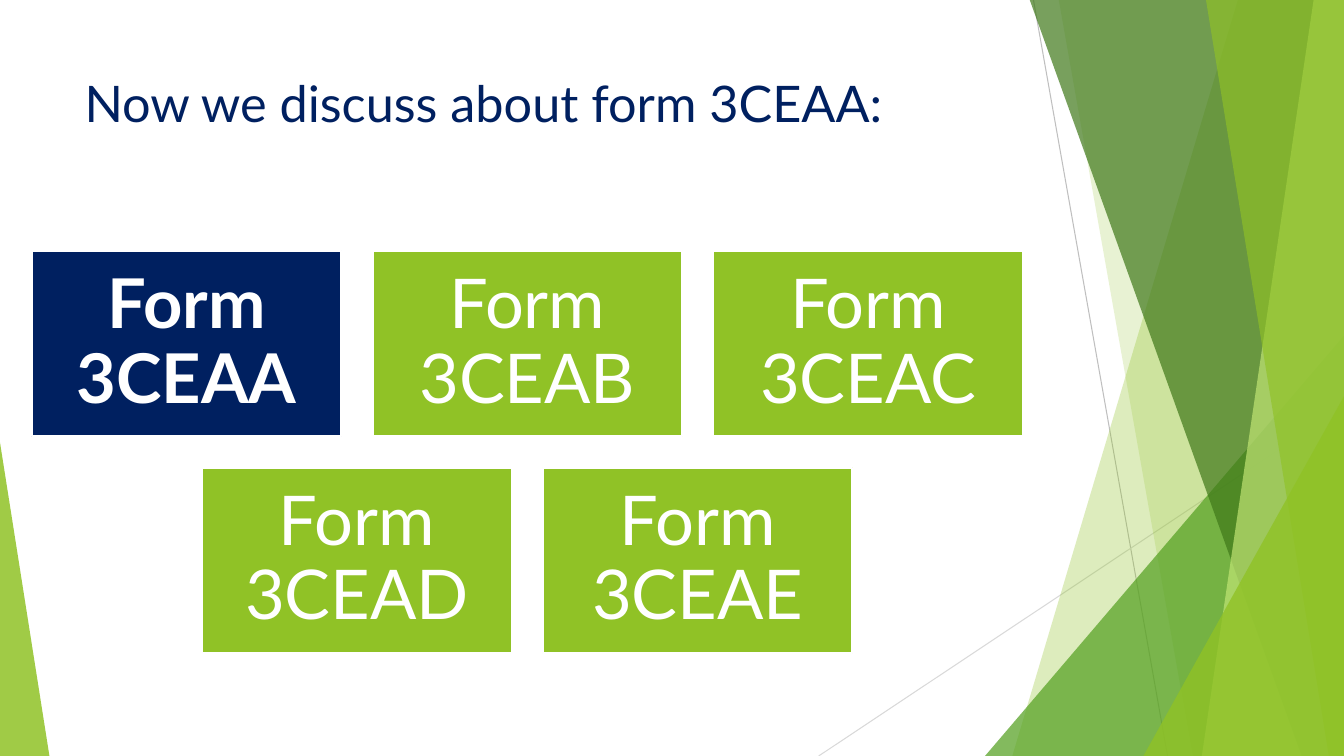
from dataclasses import dataclass

import pptx
import pptx.dml.color
import pptx.enum.shapes
import pptx.enum.text
import pptx.oxml
import pptx.oxml.ns
import pptx.util
from pptx.util import Inches

SLIDE_WIDTH, SLIDE_HEIGHT = 13.33, 7.5
CARD_WIDTH, CARD_HEIGHT = 3.07, 1.84
COLUMN_PITCH, ROW_PITCH = 3.38, 2.15
GRID_CENTER, GRID_TOP = 5.23, 2.49
FORM_ROWS = [["Form 3CEAA", "Form 3CEAB", "Form 3CEAC"], ["Form 3CEAD", "Form 3CEAE"]]
CURRENT_FORM = "Form 3CEAA"


@dataclass(frozen=True)
class Theme:
    """Colours, font and type sizes of the slide."""
    navy: str = "002060"
    lime: str = "90C226"
    pale_lime: str = "C0E474"
    leaf: str = "54A021"
    forest: str = "3F7819"
    white: str = "FFFFFF"
    gray: str = "BFBFBF"
    light_gray: str = "D9D9D9"
    font: str = "Lato"
    title_size: int = 36
    card_size: int = 49


THEME = Theme()


def rgb(color):
    """Turn a hex string into a colour value."""
    return pptx.dml.color.RGBColor.from_string(color)


def paint(shape, color, opacity=100):
    """Give a shape a flat fill of the given opacity, without line or shadow."""
    shape.shadow.inherit = False
    shape.line.fill.background()
    shape.fill.solid()
    shape.fill.fore_color.rgb = rgb(color)
    if opacity < 100:
        tint = shape.fill._xPr.find(".//" + pptx.oxml.ns.qn("a:srgbClr"))
        alpha = pptx.oxml.parse_xml(f'<a:alpha {pptx.oxml.ns.nsdecls("a")} val="{opacity * 1000}"/>')
        tint.append(alpha)


def add_hairline(slide, start, end, color):
    """Draw a thin decorative line."""
    hairline = slide.shapes.add_connector(
        pptx.enum.shapes.MSO_CONNECTOR.STRAIGHT, *map(Inches, start + end))
    hairline.line.color.rgb = rgb(color)
    hairline.line.width = pptx.util.Pt(0.75)
    hairline._element.spPr.append(
        pptx.oxml.parse_xml(f'<a:effectLst {pptx.oxml.ns.nsdecls("a")}/>'))


def add_pane(slide, top_x, bottom_x, color, opacity):
    """Draw a full-height pane from a slanted left edge to the right edge of the slide."""
    corners = [(top_x, -0.01), (SLIDE_WIDTH, -0.01),
               (SLIDE_WIDTH, SLIDE_HEIGHT), (bottom_x, SLIDE_HEIGHT)]
    points = [(Inches(x), Inches(y)) for x, y in corners]
    outline = slide.shapes.build_freeform(*points[0])
    outline.add_line_segments(points[1:], close=True)
    paint(outline.convert_to_shape(), color, opacity)


def add_wedge(slide, left, top, width, apex, color, opacity):
    """Draw a right-angled triangle standing on the bottom edge of the slide."""
    wedge = slide.shapes.add_shape(
        pptx.enum.shapes.MSO_SHAPE.ISOSCELES_TRIANGLE,
        Inches(left), Inches(top), Inches(width), Inches(SLIDE_HEIGHT - top))
    wedge.adjustments[0] = apex
    paint(wedge, color, opacity)


def add_decoration(slide):
    """Layer the lines, panes and wedges behind the content."""
    add_hairline(slide, (10.25, 0), (11.58, SLIDE_HEIGHT), THEME.gray)
    add_hairline(slide, (SLIDE_WIDTH, 4.03), (8.12, SLIDE_HEIGHT), THEME.light_gray)
    add_pane(slide, 12.28, 10.04, THEME.lime, 30)
    add_pane(slide, 10.5, 11.83, THEME.lime, 20)
    add_wedge(slide, 9.77, 3.33, 3.56, 1, THEME.leaf, 72)
    add_pane(slide, 10.21, 12.91, THEME.forest, 70)
    add_pane(slide, 13.03, 11.92, THEME.pale_lime, 70)
    add_pane(slide, 11.96, 13.18, THEME.lime, 65)
    add_wedge(slide, 11.34, 3.93, 1.99, 1, THEME.lime, 80)
    add_wedge(slide, 0, 4.39, 0.49, 0, THEME.lime, 85)


def write(paragraph, text, size, color, bold=False):
    """Add one styled run to a paragraph."""
    run = paragraph.add_run()
    run.text = text
    run.font.name = THEME.font
    run.font.size = pptx.util.Pt(size)
    run.font.bold = bold
    run.font.color.rgb = rgb(color)


def add_title(slide, text):
    """Place the slide heading."""
    heading = slide.shapes.add_textbox(Inches(0.74), Inches(0.67), Inches(9.4), Inches(1.44))
    heading.text_frame.word_wrap = True
    write(heading.text_frame.paragraphs[0], text, THEME.title_size, THEME.navy)


def add_form_card(slide, left, top, form):
    """Place one form card, highlighted when it is the current form."""
    current = form == CURRENT_FORM
    card = slide.shapes.add_shape(
        pptx.enum.shapes.MSO_SHAPE.RECTANGLE,
        Inches(left), Inches(top), Inches(CARD_WIDTH), Inches(CARD_HEIGHT))
    paint(card, THEME.navy if current else THEME.lime)
    card.line.color.rgb = rgb(THEME.white)
    card.line.width = pptx.util.Pt(1.5)
    frame = card.text_frame
    frame.word_wrap = True
    frame.vertical_anchor = pptx.enum.text.MSO_ANCHOR.MIDDLE
    frame.margin_left = frame.margin_right = Inches(0.2)
    frame.margin_top = frame.margin_bottom = Inches(0.2)
    label = frame.paragraphs[0]
    label.alignment = pptx.enum.text.PP_ALIGN.CENTER
    label.line_spacing = 0.9
    write(label, form, THEME.card_size, THEME.white, current)


def add_form_grid(slide):
    """Place the rows of form cards, each row centred."""
    for row, forms in enumerate(FORM_ROWS):
        row_width = (len(forms) - 1) * COLUMN_PITCH + CARD_WIDTH
        row_left = GRID_CENTER - row_width / 2
        for column, form in enumerate(forms):
            add_form_card(slide, row_left + column * COLUMN_PITCH,
                          GRID_TOP + row * ROW_PITCH, form)


def main():
    """Build and save the slide."""
    deck = pptx.Presentation()
    deck.slide_width, deck.slide_height = Inches(SLIDE_WIDTH), Inches(SLIDE_HEIGHT)
    slide = deck.slides.add_slide(deck.slide_layouts[6])
    add_decoration(slide)
    add_title(slide, "Now we discuss about form 3CEAA:")
    add_form_grid(slide)
    deck.save("out.pptx")


if __name__ == "__main__":
    main()
